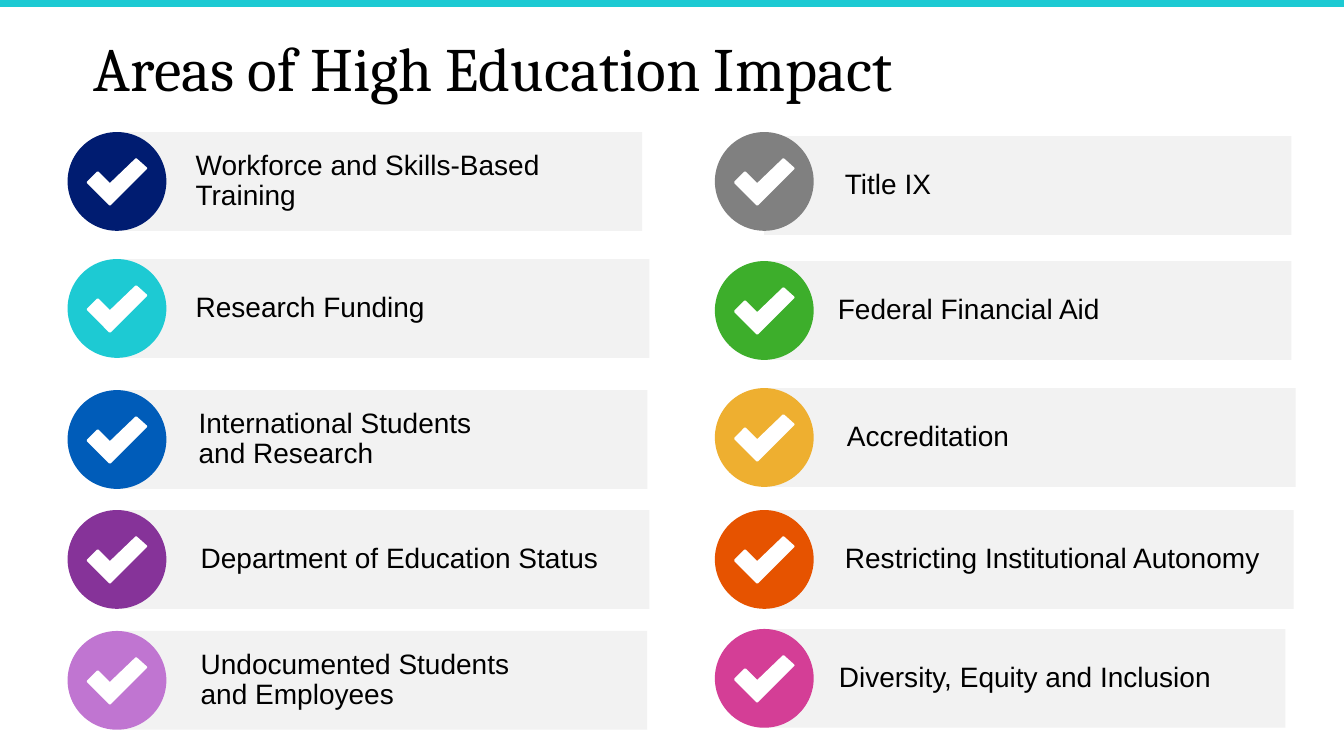
import pptx
import pptx.dml.color
import pptx.enum.shapes
import pptx.enum.text
import pptx.oxml
import pptx.util

Inches = pptx.util.Inches
Pt = pptx.util.Pt
RGBColor = pptx.dml.color.RGBColor
Shape = pptx.enum.shapes.MSO_SHAPE
Anchor = pptx.enum.text.MSO_ANCHOR
Align = pptx.enum.text.PP_ALIGN

BLACK = RGBColor(0x00, 0x00, 0x00)
WHITE = RGBColor(0xFF, 0xFF, 0xFF)
PANEL = RGBColor(0xF2, 0xF2, 0xF2)
NAVY = RGBColor(0x00, 0x1C, 0x71)
TEAL = RGBColor(0x1D, 0xCA, 0xD3)
BLUE = RGBColor(0x00, 0x5C, 0xB9)
PURPLE = RGBColor(0x86, 0x33, 0x99)
LILAC = RGBColor(0xC0, 0x75, 0xD1)
GRAY = RGBColor(0x80, 0x80, 0x80)
GREEN = RGBColor(0x3D, 0xAE, 0x2B)
GOLD = RGBColor(0xEE, 0xAF, 0x30)
ORANGE = RGBColor(0xE6, 0x53, 0x00)
PINK = RGBColor(0xD4, 0x3E, 0x96)

ROW_HEIGHT = 0.98
LEFT_BADGE = 0.67
RIGHT_BADGE = 7.09
CHECK_POINTS = [(0.42, 0.52), (0.3, 0.4), (0.2, 0.5), (0.42, 0.72), (0.78, 0.36), (0.68, 0.27)]

LEFT_AREAS = [
    ("Workforce and Skills-Based Training", NAVY, 1.31, 1.14, 1.31, 5.23),
    ("Research Funding", TEAL, 2.57, 1.14, 2.57, 5.3),
    ("International Students\vand Research", BLUE, 3.87, 1.17, 3.87, 5.25),
    ("Department of Education Status", PURPLE, 5.06, 1.19, 5.06, 5.25),
    ("Undocumented Students\vand Employees", LILAC, 6.26, 1.19, 6.26, 5.23),
]
RIGHT_AREAS = [
    ("Title IX", GRAY, 1.31, 7.58, 1.35, 5.23),
    ("Federal Financial Aid", GREEN, 2.59, 7.51, 2.59, 5.3),
    ("Accreditation", GOLD, 3.85, 7.6, 3.85, 5.25),
    ("Restricting Institutional Autonomy", ORANGE, 5.06, 7.58, 5.06, 5.25),
    ("Diversity, Equity and Inclusion", PINK, 6.24, 7.52, 6.24, 5.23),
]


def apply(target, values):
    for name, value in values.items():
        setattr(target, name, value)


class Page:
    title_font = {"name": "Cambria", "size": Pt(44), "bold": False}
    area_font = {"name": "Arial", "size": Pt(20), "bold": False}
    title_frame = {"vertical_anchor": Anchor.TOP, "word_wrap": True,
                   "auto_size": pptx.enum.text.MSO_AUTO_SIZE.NONE}
    area_frame = {"vertical_anchor": Anchor.MIDDLE, "word_wrap": True,
                  "margin_left": Inches(0.8), "margin_right": Inches(0.1),
                  "margin_top": Inches(0.05), "margin_bottom": Inches(0.05)}
    title_para = {"alignment": Align.LEFT, "line_spacing": 0.9}
    area_para = {"alignment": Align.LEFT, "line_spacing": 0.9, "space_before": Pt(12)}

    def __init__(self, deck):
        self.slide = deck.slides.add_slide(deck.slide_layouts[5])
        self.shapes = self.slide.shapes

    def set_text(self, box, text, frame_values, para_values, font_values):
        apply(box.text_frame, frame_values)
        box.text_frame.text = text
        para = box.text_frame.paragraphs[0]
        apply(para, para_values)
        for span in para.runs:
            apply(span.font, font_values)
            span.font.color.rgb = BLACK

    def title(self, text):
        box = self.shapes.title
        apply(box, {"left": Inches(0.83), "top": Inches(0.33),
                    "width": Inches(12.92), "height": Inches(1.45)})
        self.set_text(box, text, self.title_frame, self.title_para, self.title_font)

    def top_rule(self):
        rule = self.shapes.add_connector(
            pptx.enum.shapes.MSO_CONNECTOR.STRAIGHT,
            Inches(13.33), Inches(0.03), Inches(0), Inches(0.03))
        rule.line.color.rgb = TEAL
        rule.line.width = Pt(6)
        rule.element.spPr.append(pptx.oxml.parse_xml(
            '<a:effectLst xmlns:a="http://schemas.openxmlformats.org/drawingml/2006/main"/>'))

    def block(self, kind, left, top, width, color):
        box = self.shapes.add_shape(
            kind, Inches(left), Inches(top), Inches(width), Inches(ROW_HEIGHT))
        box.shadow.inherit = False
        box.fill.solid()
        box.fill.fore_color.rgb = color
        box.line.fill.background()
        return box

    def check(self, left, top):
        points = [(Inches(left + x), Inches(top + y)) for x, y in CHECK_POINTS]
        builder = self.shapes.build_freeform(*points[0])
        builder.add_line_segments(points[1:], close=True)
        mark = builder.convert_to_shape()
        mark.shadow.inherit = False
        mark.fill.solid()
        mark.fill.fore_color.rgb = WHITE
        mark.line.color.rgb = WHITE
        mark.line.width = Pt(1.5)

    def area(self, badge_left, text, color, badge_top, left, top, width):
        panel = self.block(Shape.RECTANGLE, left, top, width, PANEL)
        self.set_text(panel, text, self.area_frame, self.area_para, self.area_font)
        self.block(Shape.OVAL, badge_left, badge_top, ROW_HEIGHT, color)
        self.check(badge_left, badge_top)


def main():
    deck = pptx.Presentation()
    deck.slide_width = Inches(13.33)
    deck.slide_height = Inches(7.5)
    page = Page(deck)
    page.top_rule()
    page.title("Areas of High Education Impact")
    for badge_left, areas in ((LEFT_BADGE, LEFT_AREAS), (RIGHT_BADGE, RIGHT_AREAS)):
        for area in areas:
            page.area(badge_left, *area)
    deck.save("out.pptx")


if __name__ == "__main__":
    main()
